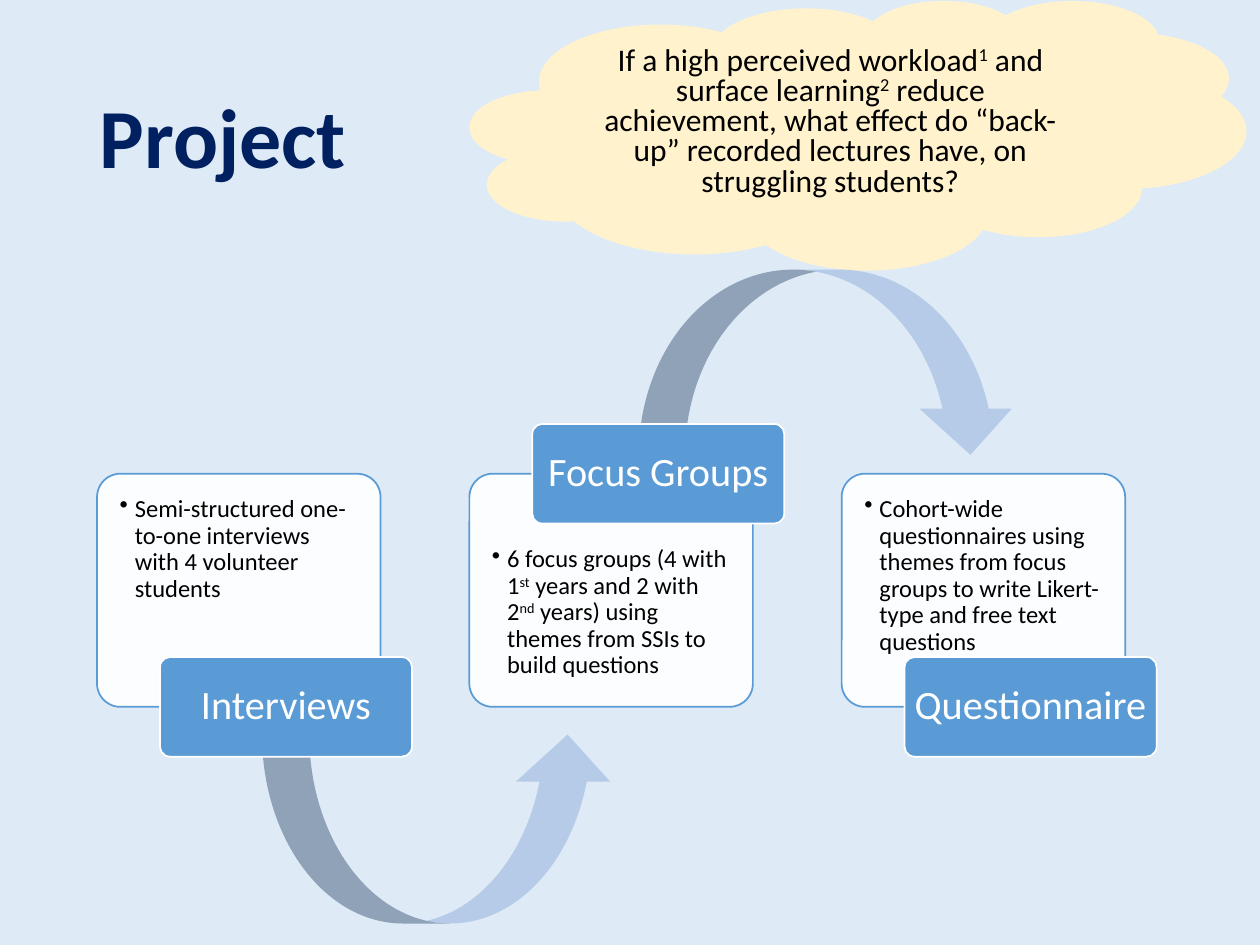
from lxml.etree import SubElement
from pptx import Presentation
from pptx.dml.color import RGBColor
from pptx.enum.shapes import MSO_SHAPE as SHAPE
from pptx.enum.text import MSO_ANCHOR as ANCHOR, MSO_AUTO_SIZE as AUTO, PP_ALIGN as ALIGN
from pptx.oxml.ns import qn
from pptx.util import Inches, Pt

TITLE = "Project"
QUESTION = ("If a high perceived workload^1^ and surface learning^2^ reduce achievement, "
            "what effect do “back-up” recorded lectures have, on struggling students?")
STAGES = [
    {"label": "Interviews", "label_on_top": False,
     "detail": "Semi-structured one-to-one interviews with 4 volunteer students",
     "arrow": (SHAPE.CURVED_UP_ARROW, 2.08, 5.83, 2.8, 1.5)},
    {"label": "Focus Groups", "label_on_top": True,
     "detail": "6 focus groups (4 with 1^st^ years and 2 with 2^nd^ years) "
               "using themes from SSIs to build questions",
     "arrow": (SHAPE.CURVED_DOWN_ARROW, 5.07, 2.14, 3, 1.47)},
    {"label": "Questionnaire", "label_on_top": False,
     "detail": "Cohort-wide questionnaires using themes from focus groups "
               "to write Likert-type and free text questions",
     "arrow": None},
]
COLORS = {"background": "DEEBF7", "title": "002060", "cloud": "FFF2CC", "text": "000000",
          "white": "FFFFFF", "blue": "5B9BD5", "arrow": "B5CBE7"}
FONT = "Calibri"
LEFT, TOP, PITCH = 0.77, 3.76, 2.955
CARD_W, CARD_H = 2.25, 1.85
CHIP_W, CHIP_H, CHIP_SHIFT = 2, 0.79, 0.5
DETAIL_W, DETAIL_H, DETAIL_GAP = 2.16, 1.37, 0.04
LABEL_GAP = 0.02


def rgb(name):
    return RGBColor.from_string(COLORS[name])


def place(sp, x, y, w, h):
    sp.left, sp.top, sp.width, sp.height = map(Inches, (x, y, w, h))


def paint(shape, fill, line=None):
    shape.fill.solid()
    shape.fill.fore_color.rgb = rgb(fill)
    if line:
        shape.line.color.rgb = rgb(line)
        shape.line.width = Pt(1)
    else:
        shape.line.fill.background()


def write(tf, text, size, color, align, spacing, bold=False):
    tf.word_wrap = True
    tf.auto_size = AUTO.NONE
    p = tf.paragraphs[0]
    p.alignment = align
    p.line_spacing = spacing
    for i, part in enumerate(text.split("^")):
        r = p.add_run()
        r.text = part
        r.font.name, r.font.size, r.font.bold = FONT, Pt(size), bold
        r.font.color.rgb = rgb(color)
        if i % 2:
            r.font._element.set("baseline", "30000")
    return p


def set_bullet(p, char=None, indent=0):
    pPr = p._p.get_or_add_pPr()
    pPr.set("marL", str(Inches(indent)))
    pPr.set("indent", str(-Inches(indent)))
    if char:
        SubElement(pPr, qn("a:buChar")).set("char", char)
    else:
        SubElement(pPr, qn("a:buNone"))


def add_shape(s, kind, box, fill, line=None):
    shape = s.shapes.add_shape(kind, *map(Inches, box))
    shape.shadow.inherit = False
    paint(shape, fill, line)
    if kind == SHAPE.ROUNDED_RECTANGLE:
        shape.adjustments[0] = 0.1
    return shape


def add_text(s, box, inset_x, inset_y):
    tf = s.shapes.add_textbox(*map(Inches, box)).text_frame
    tf.margin_left = tf.margin_right = Inches(inset_x)
    tf.margin_top = tf.margin_bottom = Inches(inset_y)
    return tf


def add_stage(s, column, stage):
    x = LEFT + column * PITCH
    on_top = stage["label_on_top"]
    card = add_shape(s, SHAPE.ROUNDED_RECTANGLE, (x, TOP, CARD_W, CARD_H), "white", "blue")
    color = card.fill._xPr.find(qn("a:solidFill"))[0]
    SubElement(color, qn("a:alpha")).set("val", "90000")

    y = TOP + (CARD_H - DETAIL_H - DETAIL_GAP if on_top else DETAIL_GAP)
    tf = add_text(s, (x + DETAIL_GAP, y, DETAIL_W, DETAIL_H), 0.14, 0.14)
    set_bullet(write(tf, stage["detail"], 14, "text", ALIGN.LEFT, 0.9), "•", 0.12)

    if stage["arrow"]:
        kind, *box = stage["arrow"]
        add_shape(s, kind, box, "arrow")

    x += CHIP_SHIFT
    y = TOP + (0 if on_top else CARD_H) - CHIP_H / 2
    add_shape(s, SHAPE.ROUNDED_RECTANGLE, (x, y, CHIP_W, CHIP_H), "blue", "white")
    tf = add_text(s, (x + LABEL_GAP, y + LABEL_GAP,
                      CHIP_W - 2 * LABEL_GAP, CHIP_H - 2 * LABEL_GAP), 0.05, 0.03)
    tf.vertical_anchor = ANCHOR.MIDDLE
    write(tf, stage["label"], 23, "white", ALIGN.CENTER, 0.9)


def main():
    prs = Presentation()
    prs.slide_width, prs.slide_height = Inches(10), Inches(7.5)
    s = prs.slides.add_slide(prs.slide_layouts[1])
    s.background.fill.solid()
    s.background.fill.fore_color.rgb = rgb("background")

    title, cloud = s.placeholders
    place(title, 0.69, 0.4, 8.62, 1.45)
    title.text_frame.vertical_anchor = ANCHOR.MIDDLE
    write(title.text_frame, TITLE, 48, "title", ALIGN.LEFT, 0.9, True)

    place(cloud, 3.73, 0, 6.16, 2.14)
    geometry = SubElement(cloud._element.spPr, qn("a:prstGeom"))
    geometry.set("prst", "cloud")
    SubElement(geometry, qn("a:avLst"))
    paint(cloud, "cloud")
    p = write(cloud.text_frame, QUESTION, 18, "text", ALIGN.CENTER, 0.8)
    p.space_before = Pt(10)
    set_bullet(p)

    for column, stage in enumerate(STAGES):
        add_stage(s, column, stage)
    prs.save("out.pptx")


if __name__ == "__main__":
    main()
